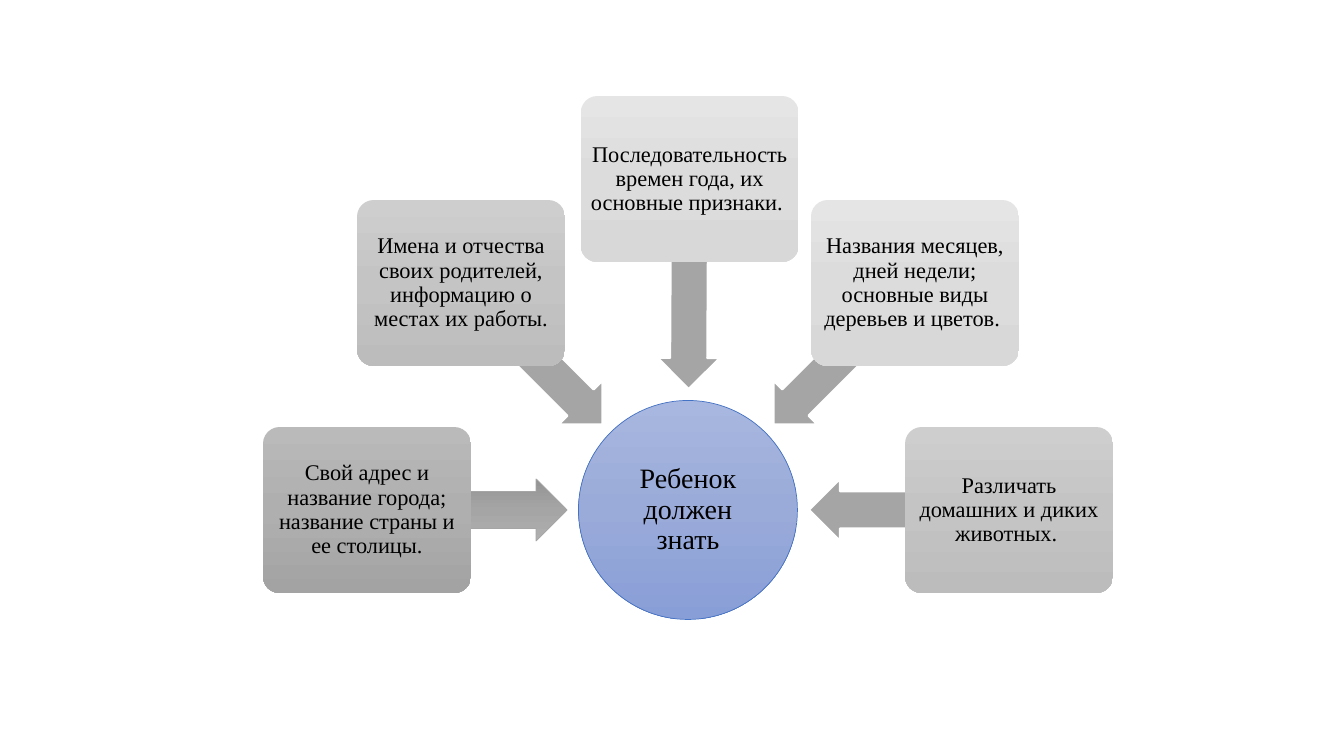
import copy
import math

from pptx import Presentation
from pptx.dml.color import RGBColor
from pptx.enum.shapes import MSO_SHAPE
from pptx.enum.text import MSO_ANCHOR, PP_ALIGN
from pptx.util import Emu, Pt

PX = 9071.43  # EMU in one px
SLIDE_W, SLIDE_H = 1344, 756
FONT = "Times New Roman"
OVAL, BOX, ARROW = MSO_SHAPE.OVAL, MSO_SHAPE.ROUNDED_RECTANGLE, MSO_SHAPE.LEFT_ARROW
MIDDLE, CENTER = MSO_ANCHOR.MIDDLE, PP_ALIGN.CENTER

COLORS = {"text": "000000", "arrow": "A5A5A5", "white": "FFFFFF", "rim": "4472C4"}
GRADIENTS = {
    "hub": ("A8B7DF", "9AABD9", "889ED7"),
    "arrow": ("AFAFAF", "A5A5A5", "939393"),
    "dark": ("BABABA", "AFAFAF", "A3A3A3"),
    "mid": ("CECECE", "C4C4C4", "BCBCBC"),
    "light": ("E5E5E5", "DCDCDC", "D8D8D8"),
}

HUB_TEXT = "Ребенок должен знать"
HUB_X, HUB_Y, HUB_SIZE = 688, 510, 219
BOX_W, BOX_H, ARROW_H = 208, 166, 62
# text, box shade, clockwise angle from the hub, extra length of the spoke
TOPICS = [
    ("Свой адрес и название города; название страны и ее столицы.", "dark", 180, 0),
    ("Имена и отчества своих родителей, информацию о местах их работы.", "mid", 225, 0),
    ("Последовательность времен года, их основные признаки. ", "light", 270.3, 10),
    ("Названия месяцев, дней недели; основные виды деревьев и цветов. ", "light", 315, 0),
    ("Различать домашних и диких животных. ", "mid", 0, 0),
]
BOX_RADIUS, ARROW_RADIUS, ARROW_W = 321, 221, 200


def px(n):
    return Emu(round(n * PX))


def set_gradient(sp, colors):
    """Fill from top to bottom with evenly spaced colours."""
    sp.fill.gradient()
    sp.fill.gradient_angle = 270
    first = sp.fill.gradient_stops[0]
    first.color.rgb = RGBColor.from_string(colors[0])
    stops = next(sp._element.spPr.iter("{*}gsLst"))
    for gs in list(stops)[1:]:
        stops.remove(gs)
    for _ in colors[1:]:
        stops.append(copy.deepcopy(stops[0]))
    for i, (stop, color) in enumerate(zip(sp.fill.gradient_stops, colors)):
        stop.position = i / (len(colors) - 1)
        stop.color.rgb = RGBColor.from_string(color)


def add_centered(slide, kind, cx, cy, w, h, gradient=None, fill=None, line=None,
                 line_pt=0.5, adjustments=(), rotation=0):
    sp = slide.shapes.add_shape(kind, px(cx - w / 2), px(cy - h / 2), px(w), px(h))
    sp.shadow.inherit = False
    sp.rotation = rotation
    for i, value in enumerate(adjustments):
        sp.adjustments[i] = value
    if gradient:
        set_gradient(sp, GRADIENTS[gradient])
    else:
        sp.fill.solid()
        sp.fill.fore_color.rgb = RGBColor.from_string(COLORS[fill])
    if line:
        sp.line.color.rgb = RGBColor.from_string(COLORS[line])
        sp.line.width = Pt(line_pt)
    else:
        sp.line.fill.background()
    return sp


def write(sp, text, size=16, inset=3, color="text"):
    tf = sp.text_frame
    tf.word_wrap = True
    tf.vertical_anchor = MIDDLE
    tf.margin_left = tf.margin_right = tf.margin_top = tf.margin_bottom = px(inset)
    p = tf.paragraphs[0]
    p.alignment = CENTER
    p.line_spacing = 0.9
    r = p.add_run()
    r.text = text
    r.font.size = Pt(size)
    r.font.name = FONT
    r.font.color.rgb = RGBColor.from_string(COLORS[color])


def on_spoke(angle, radius):
    a = math.radians(angle)
    return HUB_X + radius * math.cos(a), HUB_Y + radius * math.sin(a)


def main():
    prs = Presentation()
    prs.slide_width, prs.slide_height = px(SLIDE_W), px(SLIDE_H)
    slide = prs.slides.add_slide(prs.slide_layouts[6])

    hub = add_centered(slide, OVAL, HUB_X, HUB_Y, HUB_SIZE, HUB_SIZE,
                       gradient="hub", line="rim")
    write(hub, HUB_TEXT, size=20, inset=1)

    for i, (text, shade, angle, extra) in enumerate(TOPICS):
        if i == 0:
            style = {"gradient": "arrow", "line": "arrow"}
        else:
            style = {"fill": "arrow", "line": "white", "line_pt": 1.5}
        add_centered(slide, ARROW, *on_spoke(angle, ARROW_RADIUS + extra / 2),
                     ARROW_W + extra, ARROW_H, adjustments=(0.6, 0.5),
                     rotation=angle, **style)
        box = add_centered(slide, BOX, *on_spoke(angle, BOX_RADIUS + extra),
                           BOX_W + extra, BOX_H, gradient=shade, adjustments=(0.1,))
        write(box, text)

    prs.save("out.pptx")


if __name__ == "__main__":
    main()
